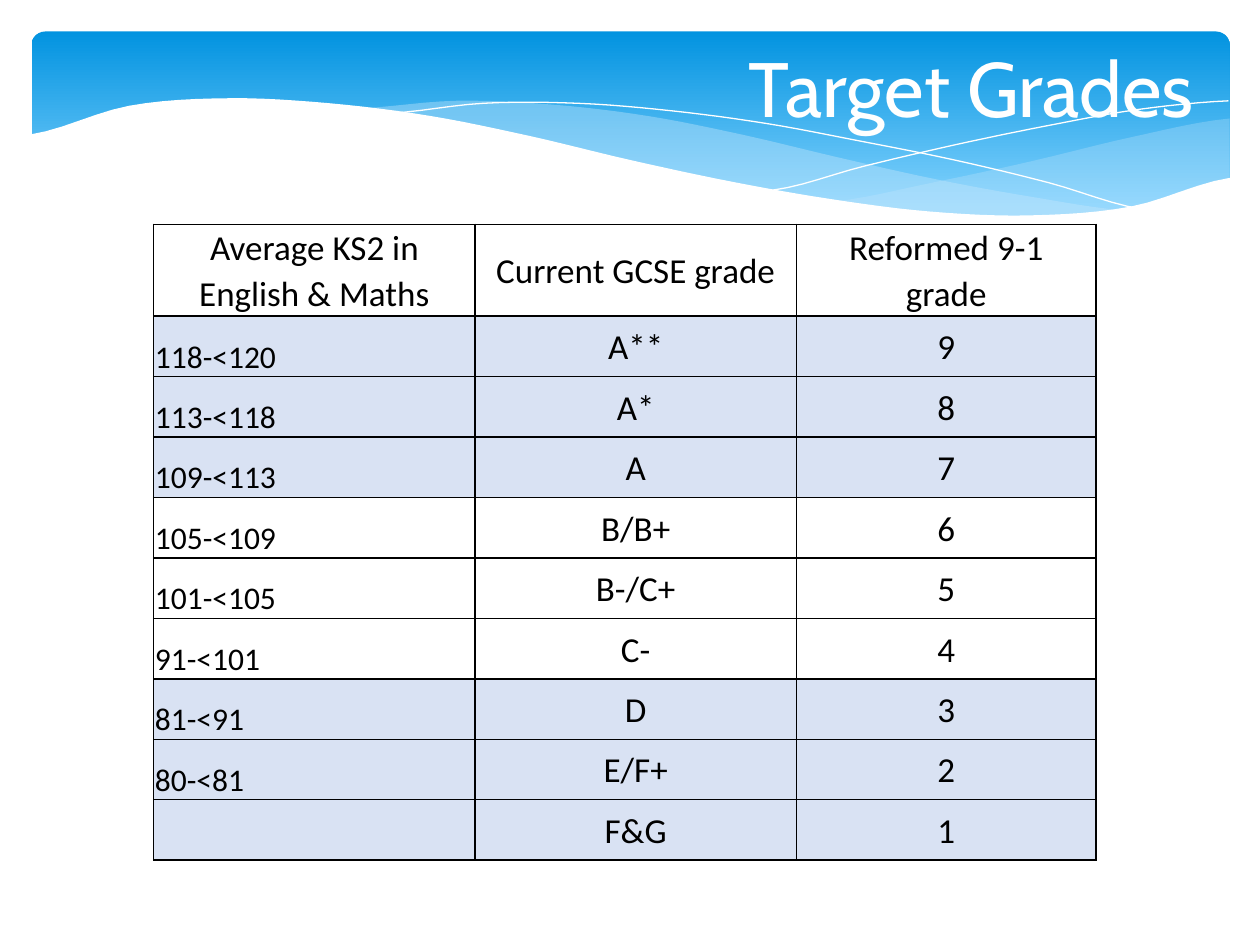
from lxml import etree
from pptx import Presentation
from pptx import util as u
from pptx.dml.color import RGBColor
from pptx.enum import shapes, text
from pptx.oxml.ns import qn

Inches = u.Inches
COLORS = {"sky": "0293E0", "light": "83D3FE", "wave": "C6E7FC",
          "white": "FFFFFF", "black": "000000", "band": "D9E2F3"}


def rgb(name):
    return RGBColor.from_string(COLORS[name])


def set_format(target, values):
    for name, value in values.items():
        setattr(target, name, value)


presentation = Presentation()
presentation.slide_width, presentation.slide_height = Inches(10), Inches(7.5)
slide = presentation.slides.add_slide(presentation.slide_layouts[5])

# Gradient banner
banner = slide.shapes.add_shape(shapes.MSO_SHAPE.ROUNDED_RECTANGLE,
                                Inches(0.25), Inches(0.25), Inches(9.51), Inches(1.56))
banner.adjustments[0] = 0.07
banner.shadow.inherit = False
banner.line.fill.background()
banner.fill.gradient()
banner.fill.gradient_angle = 270
for stop, (color, position) in zip(banner.fill.gradient_stops, [("sky", 0), ("light", 0.9)]):
    stop.color.rgb = rgb(color)
    stop.position = position

# Waves, back to front: fill colour (None for a white line), opacity in percent, edges.
# An edge runs from one x to another through heights at equal steps.
WAVES = [
    ("wave", 29, [(6.61, 9.76, [1.6, 1.45, 1.28, 1.09, 0.94]),
                  (9.76, 6.61, [1.41, 1.65, 1.72, 1.69, 1.6])]),
    ("wave", 40, [(2.86, 8.93, [0.86, 0.8, 0.83, 0.92, 1.07, 1.25, 1.42, 1.56, 1.67]),
                  (8.93, 2.86, [1.67, 1.73, 1.69, 1.61, 1.48, 1.31, 1.13, 0.97, 0.86])]),
    (None, 100, [(3.09, 9.07, [0.9, 0.82, 0.82, 0.88, 0.98, 1.12, 1.27, 1.45, 1.66])]),
    (None, 100, [(6.13, 9.75, [1.51, 1.32, 1.15, 1, 0.87, 0.8])]),
    ("white", 100, [(0.23, 9.77, [1.07, 0.84, 0.78, 0.82, 0.92, 1.08, 1.27,
                                  1.44, 1.58, 1.68, 1.71, 1.64, 1.41]),
                    (9.77, 0.23, [2.24, 2.24])]),
]
STEPS = 6
wave_group = slide.shapes.add_group_shape()
for color, opacity, edges in WAVES:
    # Smooth each edge with a Catmull-Rom spline
    points = []
    for start, end, heights in edges:
        last = len(heights) - 1
        for step in range(last * STEPS + 1):
            knot = min(step // STEPS, last - 1)
            t = step / STEPS - knot
            a, b, c, d = (heights[min(max(knot + offset, 0), last)] for offset in (-1, 0, 1, 2))
            y = b + t * (c - a + t * (2 * a - 5 * b + 4 * c - d
                                      + t * (3 * (b - c) + d - a))) / 2
            x = start + (end - start) * step / (last * STEPS)
            points.append((Inches(x), Inches(y)))

    builder = wave_group.shapes.build_freeform(*points[0])
    builder.add_line_segments(points[1:], close=color is not None)
    wave = builder.convert_to_shape()
    wave.shadow.inherit = False
    if color is None:
        wave.fill.background()
        wave.line.color.rgb = rgb("white")
        wave.line.width = u.Pt(0)
        continue
    wave.line.fill.background()
    wave.fill.solid()
    wave.fill.fore_color.rgb = rgb(color)
    if opacity < 100:
        fill_color = wave.element.spPr.find(qn("a:solidFill"))[0]
        etree.SubElement(fill_color, qn("a:alpha"), val=str(opacity * 1000))

# Title, brought in front of the waves
title = slide.shapes.title
title.element.getparent().append(title.element)
set_format(title, {"left": Inches(5.79), "top": Inches(0),
                   "width": Inches(3.84), "height": Inches(1.37)})
title.text_frame.text = "Target Grades"
title.text_frame.vertical_anchor = text.MSO_ANCHOR.MIDDLE
title_paragraph = title.text_frame.paragraphs[0]
title_paragraph.alignment = text.PP_ALIGN.CENTER
title_font = title_paragraph.runs[0].font
set_format(title_font, {"name": "Cabin", "size": u.Pt(44)})
title_font.color.rgb = rgb("white")

# Grade table
GRADES = [
    ("Average KS2 in English & Maths", "Current GCSE grade", "Reformed 9-1 grade"),
    ("118-<120", "A**", "9"),
    ("113-<118", "A*", "8"),
    ("109-<113", "A", "7"),
    ("105-<109", "B/B+", "6"),
    ("101-<105", "B-/C+", "5"),
    ("91-<101", "C-", "4"),
    ("81-<91", "D", "3"),
    ("80-<81", "E/F+", "2"),
    ("", "F&G", "1"),
]
BANDED_ROWS = {1, 2, 3, 7, 8, 9}
COLUMN_WIDTHS = [2.55, 2.55, 2.38]
ROW_HEIGHT = 0.48
GRADE_CELL = {"margin_left": Inches(0.07), "margin_right": Inches(0.07),
              "margin_top": 0, "margin_bottom": 0,
              "vertical_anchor": text.MSO_ANCHOR.MIDDLE}
RANGE_CELL = {"margin_left": Inches(0.01), "margin_right": Inches(0.01),
              "margin_top": Inches(0.01), "margin_bottom": 0,
              "vertical_anchor": text.MSO_ANCHOR.BOTTOM}
GRADE_PARAGRAPH = {"alignment": text.PP_ALIGN.CENTER, "line_spacing": 1.07}
RANGE_PARAGRAPH = {"alignment": text.PP_ALIGN.LEFT}

table = slide.shapes.add_table(len(GRADES), len(COLUMN_WIDTHS), Inches(1.22), Inches(1.78),
                               Inches(sum(COLUMN_WIDTHS)),
                               Inches(ROW_HEIGHT * len(GRADES))).table
set_format(table, {"first_row": False, "horz_banding": False})
for column, width in zip(table.columns, COLUMN_WIDTHS):
    column.width = Inches(width)

for row_index, row in enumerate(GRADES):
    table.rows[row_index].height = Inches(ROW_HEIGHT)
    for column_index, label in enumerate(row):
        cell = table.cell(row_index, column_index)
        is_range = row_index > 0 and column_index == 0
        set_format(cell, RANGE_CELL if is_range else GRADE_CELL)

        # Borders go before the fill in the cell properties
        properties = cell._tc.get_or_add_tcPr()
        for side in ("a:lnL", "a:lnR", "a:lnT", "a:lnB"):
            border = etree.SubElement(properties, qn(side), w=str(u.Pt(1)))
            border_fill = etree.SubElement(border, qn("a:solidFill"))
            etree.SubElement(border_fill, qn("a:srgbClr"), val=COLORS["black"])
        if row_index in BANDED_ROWS:
            cell.fill.solid()
            cell.fill.fore_color.rgb = rgb("band")
        else:
            cell.fill.background()

        if label:
            paragraph = cell.text_frame.paragraphs[0]
            set_format(paragraph, RANGE_PARAGRAPH if is_range else GRADE_PARAGRAPH)
            run = paragraph.add_run()
            run.text = label
            set_format(run.font, {"name": "Calibri", "size": u.Pt(18 if is_range else 20)})
            run.font.color.rgb = rgb("black")

presentation.save("out.pptx")
